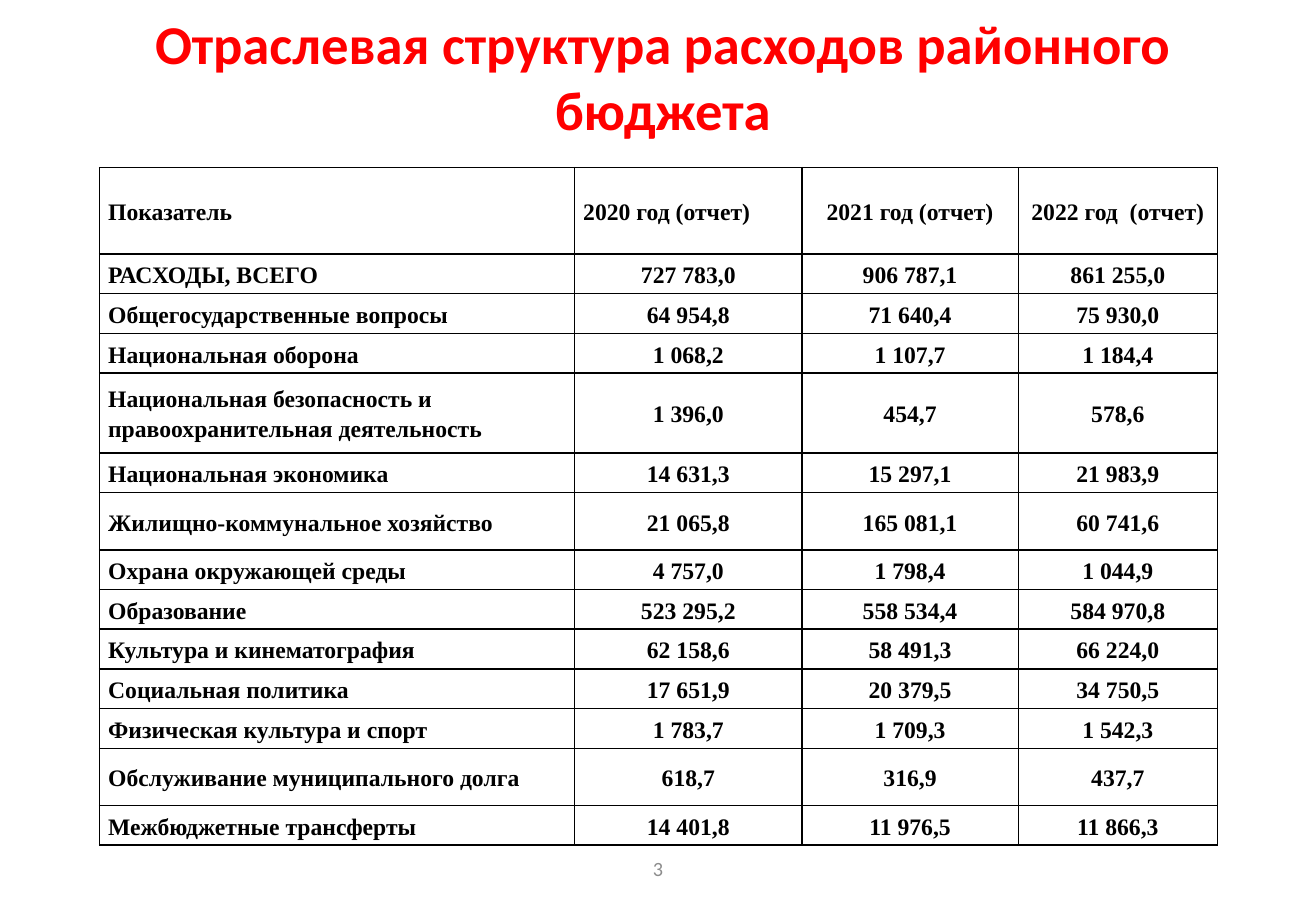
from lxml.etree import SubElement
from pptx import Presentation
from pptx.dml.color import RGBColor
from pptx.enum.text import MSO_ANCHOR, MSO_AUTO_SIZE, PP_ALIGN
from pptx.oxml.ns import qn
from pptx.util import Inches, Pt

RED = RGBColor(0xFF, 0x00, 0x00)
BLACK = RGBColor(0x00, 0x00, 0x00)
GRAY = RGBColor(0x8C, 0x8C, 0x8C)

COLUMN_WIDTHS = [3.91, 1.87, 1.78, 1.64]
ROW_HEIGHT = 0.32
TALL_ROWS = {0: 0.71, 4: 0.66, 6: 0.47, 12: 0.47}
EXPENSES = [
    ("Показатель", "2020 год (отчет)", "2021 год (отчет)", "2022 год  (отчет)"),
    ("РАСХОДЫ, ВСЕГО", "727 783,0", "906 787,1", "861 255,0"),
    ("Общегосударственные вопросы", "64 954,8", "71 640,4", "75 930,0"),
    ("Национальная оборона", "1 068,2", "1 107,7", "1 184,4"),
    ("Национальная безопасность и правоохранительная деятельность",
     "1 396,0", "454,7", "578,6"),
    ("Национальная экономика", "14 631,3", "15 297,1", "21 983,9"),
    ("Жилищно-коммунальное хозяйство", "21 065,8", "165 081,1", "60 741,6"),
    ("Охрана окружающей среды", "4 757,0", "1 798,4", "1 044,9"),
    ("Образование", "523 295,2", "558 534,4", "584 970,8"),
    ("Культура и кинематография", "62 158,6", "58 491,3", "66 224,0"),
    ("Социальная политика", "17 651,9", "20 379,5", "34 750,5"),
    ("Физическая культура и спорт", "1 783,7", "1 709,3", "1 542,3"),
    ("Обслуживание муниципального долга", "618,7", "316,9", "437,7"),
    ("Межбюджетные трансферты", "14 401,8", "11 976,5", "11 866,3"),
]


class BudgetSlide:
    heading_font = "Calibri"
    table_font = "Times New Roman"

    def __init__(self, presentation):
        self.slide = presentation.slides.add_slide(presentation.slide_layouts[5])

    def style(self, paragraph, name, size, color, bold, alignment):
        paragraph.alignment = alignment
        font = paragraph.font
        font.name = name
        font.size = Pt(size)
        font.color.rgb = color
        font.bold = bold

    def fill_frame(self, shape, text, size, color, bold):
        frame = shape.text_frame
        frame.text = text
        frame.word_wrap = True
        frame.auto_size = MSO_AUTO_SIZE.NONE
        frame.vertical_anchor = MSO_ANCHOR.MIDDLE
        self.style(frame.paragraphs[0], self.heading_font, size, color, bold, PP_ALIGN.CENTER)

    def title(self, text, left, top, width, height):
        title = self.slide.shapes.title
        title.left, title.top = Inches(left), Inches(top)
        title.width, title.height = Inches(width), Inches(height)
        self.fill_frame(title, text, 32.4, RED, True)

    def page_number(self, text, left, top, width, height):
        box = self.slide.shapes.add_textbox(
            Inches(left), Inches(top), Inches(width), Inches(height))
        self.fill_frame(box, text, 12, GRAY, False)

    def table(self, rows, left, top):
        heights = [TALL_ROWS.get(index, ROW_HEIGHT) for index in range(len(rows))]
        table = self.slide.shapes.add_table(
            len(rows), len(COLUMN_WIDTHS), Inches(left), Inches(top),
            Inches(sum(COLUMN_WIDTHS)), Inches(sum(heights))).table
        table.horz_banding = False
        for column, width in zip(table.columns, COLUMN_WIDTHS):
            column.width = Inches(width)
        for row_index, values in enumerate(rows):
            table.rows[row_index].height = Inches(heights[row_index])
            for column_index, text in enumerate(values):
                is_left = column_index == 0 or (row_index, column_index) == (0, 1)
                alignment = PP_ALIGN.LEFT if is_left else PP_ALIGN.CENTER
                self.cell(table.cell(row_index, column_index), text, alignment)

    def cell(self, cell, text, alignment):
        cell.text = text
        cell.vertical_anchor = MSO_ANCHOR.MIDDLE
        cell.margin_left = cell.margin_right = Inches(0.07)
        cell.margin_top = cell.margin_bottom = Inches(0.04)
        paragraph = cell.text_frame.paragraphs[0]
        paragraph.line_spacing = 1.15
        paragraph.space_after = Pt(10)
        self.style(paragraph, self.table_font, 14, BLACK, True, alignment)
        self.borders(cell)
        cell.fill.background()

    def borders(self, cell):
        properties = cell._tc.get_or_add_tcPr()
        for side in ("a:lnL", "a:lnR", "a:lnT", "a:lnB"):
            line = SubElement(properties, qn(side), w=str(Pt(1)))
            fill = SubElement(line, qn("a:solidFill"))
            SubElement(fill, qn("a:srgbClr"), val=str(BLACK))


def main():
    presentation = Presentation()
    presentation.slide_width = Inches(10.83)
    presentation.slide_height = Inches(7.5)
    budget = BudgetSlide(presentation)
    budget.title("Отраслевая структура расходов районного бюджета", 0.58, 0, 9.75, 1.25)
    budget.table(EXPENSES, 0.82, 1.38)
    budget.page_number("3", 3.7, 6.95, 3.43, 0.4)
    presentation.save("out.pptx")


if __name__ == "__main__":
    main()
